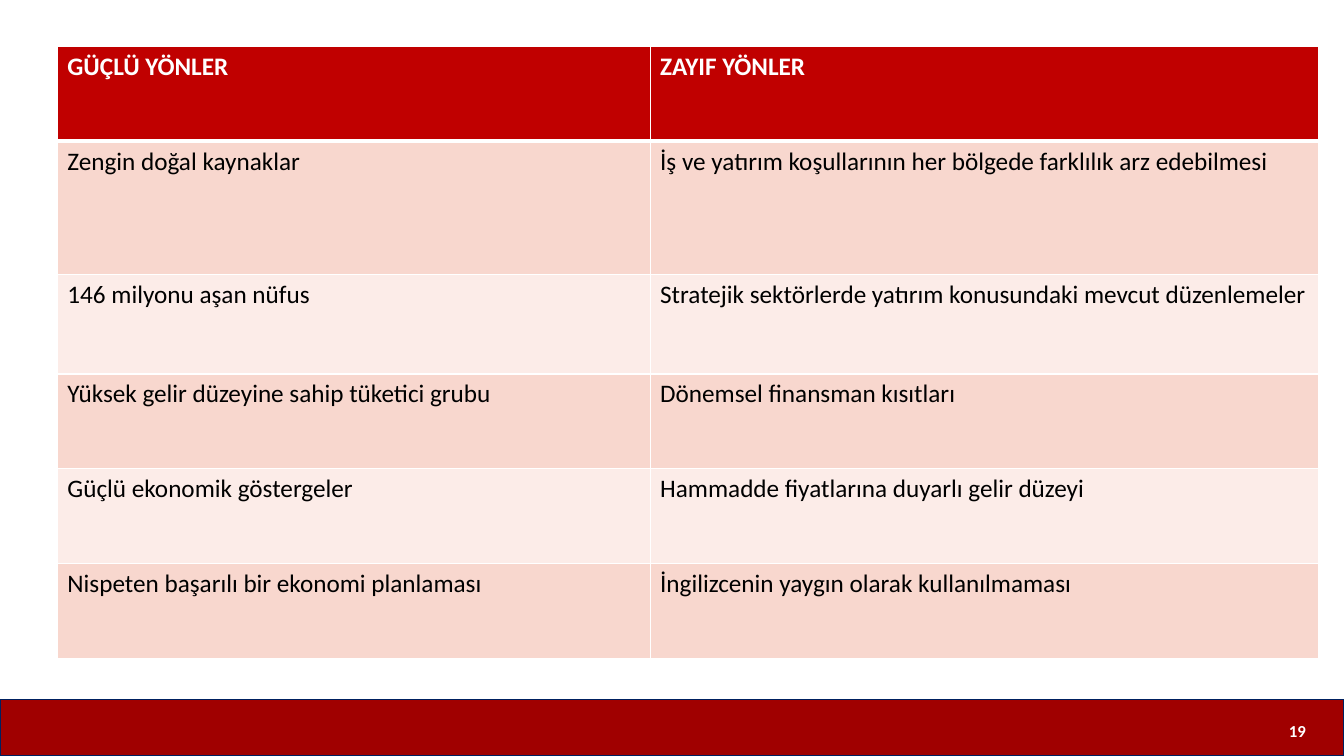
from lxml import etree
from pptx import Presentation
from pptx.dml.color import RGBColor
from pptx.enum.shapes import MSO_SHAPE
from pptx.enum.text import MSO_ANCHOR, PP_ALIGN
from pptx.oxml.ns import qn
from pptx.util import Pt

RECTANGLE = MSO_SHAPE.RECTANGLE
ROUND_TOP = MSO_SHAPE.ROUND_2_SAME_RECTANGLE
MIDDLE = MSO_ANCHOR.MIDDLE
CENTER = PP_ALIGN.CENTER

FONT = "Calibri"
COLORS = {
    "white": "FFFFFF",
    "black": "000000",
    "header": "C00000",
    "dark band": "F8D7CE",
    "light band": "FCECE8",
    "footer": "A00000",
    "footer line": "002060",
}

STRENGTHS_AND_WEAKNESSES = [
    ("GÜÇLÜ YÖNLER", "ZAYIF YÖNLER"),
    ("Zengin doğal kaynaklar",
     "İş ve yatırım koşullarının her bölgede farklılık arz edebilmesi"),
    ("146 milyonu aşan nüfus",
     "Stratejik sektörlerde yatırım konusundaki mevcut düzenlemeler"),
    ("Yüksek gelir düzeyine sahip tüketici grubu",
     "Dönemsel finansman kısıtları"),
    ("Güçlü ekonomik göstergeler",
     "Hammadde fiyatlarına duyarlı gelir düzeyi"),
    ("Nispeten başarılı bir ekonomi planlaması",
     "İngilizcenin yaygın olarak kullanılmaması"),
]
COLUMN_WIDTHS = [423.4, 477.4]
ROW_HEIGHTS = [67.7, 95, 71.3, 67.7, 67.7, 67.7]
FOOTER_TOP = 499.7


def rgb(color):
    return RGBColor.from_string(COLORS[color])


def add_run(paragraph, text, size, color, bold):
    run = paragraph.add_run()
    run.text = text
    run.font.name = FONT
    run.font.size = Pt(size)
    run.font.bold = bold
    run.font.color.rgb = rgb(color)


def add_cell_borders(cell, widths):
    """Draw white borders; widths maps L, R, T and B, in that order, to points."""
    properties = cell._tc.get_or_add_tcPr()
    for side, width in widths.items():
        line = etree.SubElement(properties, qn(f"a:ln{side}"), w=str(Pt(width)))
        fill = etree.SubElement(line, qn("a:solidFill"))
        etree.SubElement(fill, qn("a:srgbClr"), val=COLORS["white"])


def add_comparison_table(slide, left, top):
    table = slide.shapes.add_table(
        len(ROW_HEIGHTS), len(COLUMN_WIDTHS), Pt(left), Pt(top),
        Pt(sum(COLUMN_WIDTHS)), Pt(sum(ROW_HEIGHTS))).table
    for column, width in zip(table.columns, COLUMN_WIDTHS):
        column.width = Pt(width)
    for row, height in zip(table.rows, ROW_HEIGHTS):
        row.height = Pt(height)

    for r, entries in enumerate(STRENGTHS_AND_WEAKNESSES):
        is_header = r == 0
        band = "header" if is_header else "dark band" if r % 2 else "light band"
        borders = {"L": 1, "R": 1, "T": 3 if r == 1 else 1, "B": 3 if is_header else 1}
        for c, entry in enumerate(entries):
            cell = table.cell(r, c)
            add_cell_borders(cell, borders)
            cell.fill.solid()
            cell.fill.fore_color.rgb = rgb(band)
            add_run(cell.text_frame.paragraphs[0], entry, 18,
                    "white" if is_header else "black", is_header)


def add_footer_bar(slide, width, height):
    bar = slide.shapes.add_shape(RECTANGLE, 0, Pt(FOOTER_TOP), Pt(width), Pt(height))
    bar.shadow.inherit = False
    bar.fill.solid()
    bar.fill.fore_color.rgb = rgb("footer")
    bar.line.color.rgb = rgb("footer line")
    bar.line.width = Pt(1)


def add_page_number(slide, number):
    tab = slide.shapes.add_shape(
        ROUND_TOP, Pt(909.4), Pt(FOOTER_TOP), Pt(34.6), Pt(42.5))
    tab.shadow.inherit = False
    tab.fill.background()
    tab.line.fill.background()
    tab.text_frame.vertical_anchor = MIDDLE
    paragraph = tab.text_frame.paragraphs[0]
    paragraph.alignment = CENTER
    add_run(paragraph, number, 12, "white", True)


def main():
    presentation = Presentation()
    presentation.slide_width = Pt(960)
    presentation.slide_height = Pt(540)
    slide = presentation.slides.add_slide(presentation.slide_layouts[6])
    add_footer_bar(slide, 960, 40.3)
    add_page_number(slide, "19")
    add_comparison_table(slide, 41, 33.1)
    presentation.save("out.pptx")


if __name__ == "__main__":
    main()
